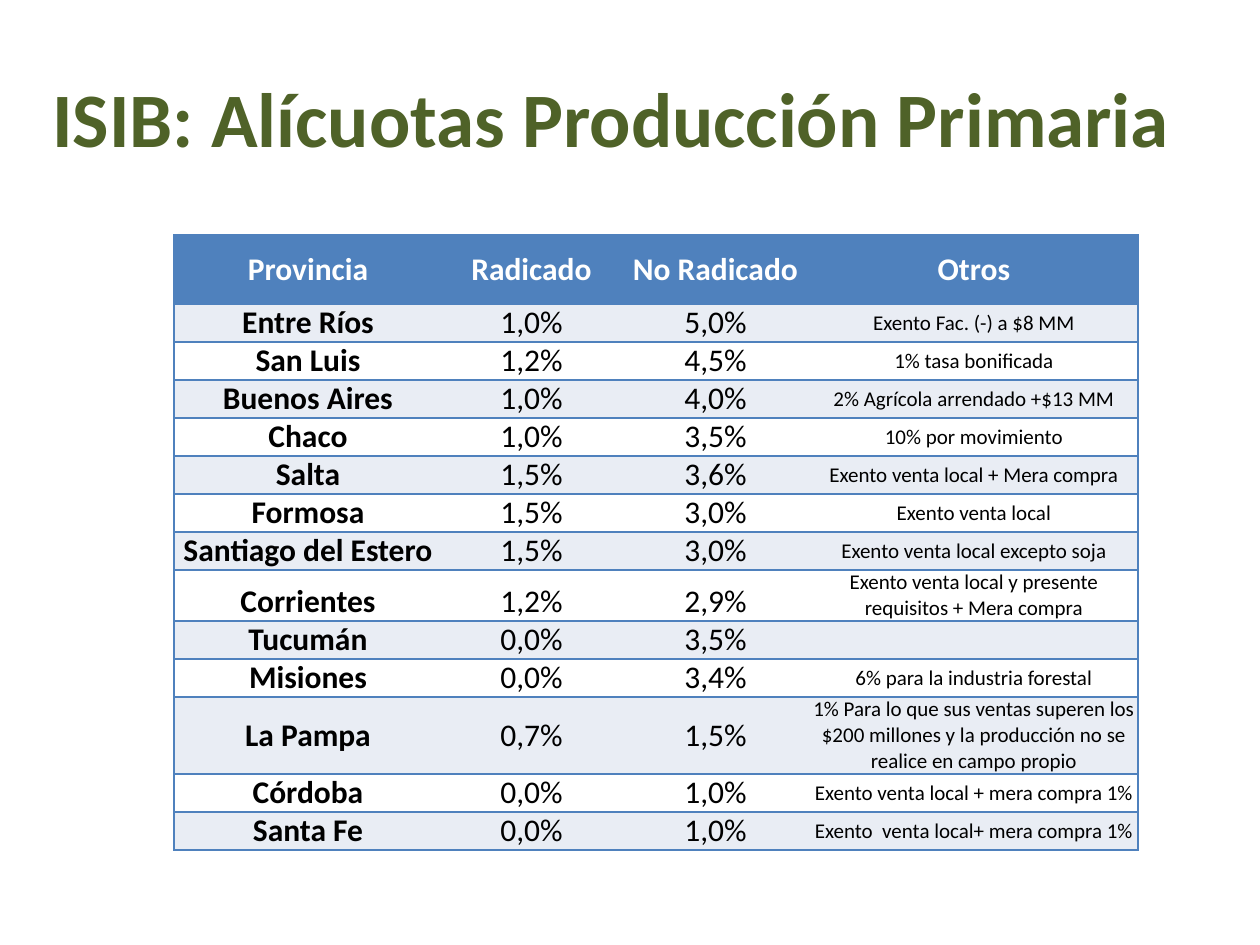
"""Build the slide with the table of primary production tax rates by province."""
import lxml.etree
import pptx
import pptx.dml.color
import pptx.enum.text
import pptx.oxml
import pptx.oxml.ns
import pptx.util

PX = 914400 // 126
COLORS = {"title": "4F6228", "blue": "4F81BD", "band": "E9EDF4", "white": "FFFFFF", "black": "000000"}
FONT = "Calibri"
ANCHOR = pptx.enum.text.MSO_ANCHOR
COLUMN_WIDTHS = [268, 179, 189, 328]
HEADER_HEIGHT, ROW_HEIGHT = 69, 38
TALL_ROWS = {"Corrientes": 51, "La Pampa": 77}
ROWS = [
    ("Provincia", "Radicado", "No Radicado", "Otros"),
    ("Entre Ríos", "1,0%", "5,0%", "Exento Fac. (-) a $8 MM"),
    ("San Luis", "1,2%", "4,5%", "1% tasa bonificada"),
    ("Buenos Aires", "1,0%", "4,0%", "2% Agrícola arrendado +$13 MM"),
    ("Chaco", "1,0%", "3,5%", "10% por movimiento"),
    ("Salta", "1,5%", "3,6%", "Exento venta local + Mera compra"),
    ("Formosa", "1,5%", "3,0%", "Exento venta local"),
    ("Santiago del Estero", "1,5%", "3,0%", "Exento venta local excepto soja"),
    ("Corrientes", "1,2%", "2,9%", "Exento venta local y presente requisitos + Mera compra"),
    ("Tucumán", "0,0%", "3,5%", ""),
    ("Misiones", "0,0%", "3,4%", "6% para la industria forestal"),
    ("La Pampa", "0,7%", "1,5%",
     "1% Para lo que sus ventas superen los $200 millones y la producción no se realice en campo propio"),
    ("Córdoba", "0,0%", "1,0%", "Exento venta local + mera compra 1%"),
    ("Santa Fe", "0,0%", "1,0%", "Exento  venta local+ mera compra 1%"),
]


def write(frame, text, size, color, bold):
    para = frame.paragraphs[0]
    para.text = text
    para.alignment = pptx.enum.text.PP_ALIGN.CENTER
    para.font.name = FONT
    para.font.size = pptx.util.Pt(size)
    para.font.bold = bold
    para.font.color.rgb = pptx.dml.color.RGBColor.from_string(COLORS[color])


def set_borders(cell, visible):
    properties = cell._tc.get_or_add_tcPr()
    for position, side in enumerate("LRTB"):
        line = pptx.oxml.parse_xml(f'<a:ln{side} {pptx.oxml.ns.nsdecls("a")} w="12700"/>')
        if side in visible:
            fill = lxml.etree.SubElement(line, pptx.oxml.ns.qn("a:solidFill"))
            lxml.etree.SubElement(fill, pptx.oxml.ns.qn("a:srgbClr"), val=COLORS["blue"])
        else:
            lxml.etree.SubElement(line, pptx.oxml.ns.qn("a:noFill"))
        properties.insert(position, line)


deck = pptx.Presentation()
deck.slide_width, deck.slide_height = 1260 * PX, 945 * PX
page = deck.slides.add_slide(deck.slide_layouts[6])

title = page.shapes.add_textbox(25 * PX, 38 * PX, 1191 * PX, 157 * PX).text_frame
title.word_wrap = True
title.vertical_anchor = ANCHOR.MIDDLE
write(title, "ISIB: Alícuotas Producción Primaria ", 44, "title", True)

heights = [HEADER_HEIGHT] + [TALL_ROWS.get(row[0], ROW_HEIGHT) for row in ROWS[1:]]
table = page.shapes.add_table(
    len(ROWS), len(COLUMN_WIDTHS), 174 * PX, 235 * PX, sum(COLUMN_WIDTHS) * PX, sum(heights) * PX
).table
table.horz_banding = False
for column, width in zip(table.columns, COLUMN_WIDTHS):
    column.width = width * PX

last = len(COLUMN_WIDTHS) - 1
for r, texts in enumerate(ROWS):
    table.rows[r].height = heights[r] * PX
    header = r == 0
    fill = "blue" if header else "band" if r % 2 else "white"
    for c, text in enumerate(texts):
        cell = table.cell(r, c)
        cell.margin_left = cell.margin_right = cell.margin_top = cell.margin_bottom = 0
        centred = header or c == last or texts[0] == "La Pampa"
        cell.vertical_anchor = ANCHOR.MIDDLE if centred else ANCHOR.BOTTOM
        cell.fill.solid()
        cell.fill.fore_color.rgb = pptx.dml.color.RGBColor.from_string(COLORS[fill])
        set_borders(cell, "TB" + {0: "L", last: "R"}.get(c, ""))
        size = 12 if c == last and not header else 18
        write(cell.text_frame, text, size, "white" if header else "black", header or c == 0)

deck.save("out.pptx")
